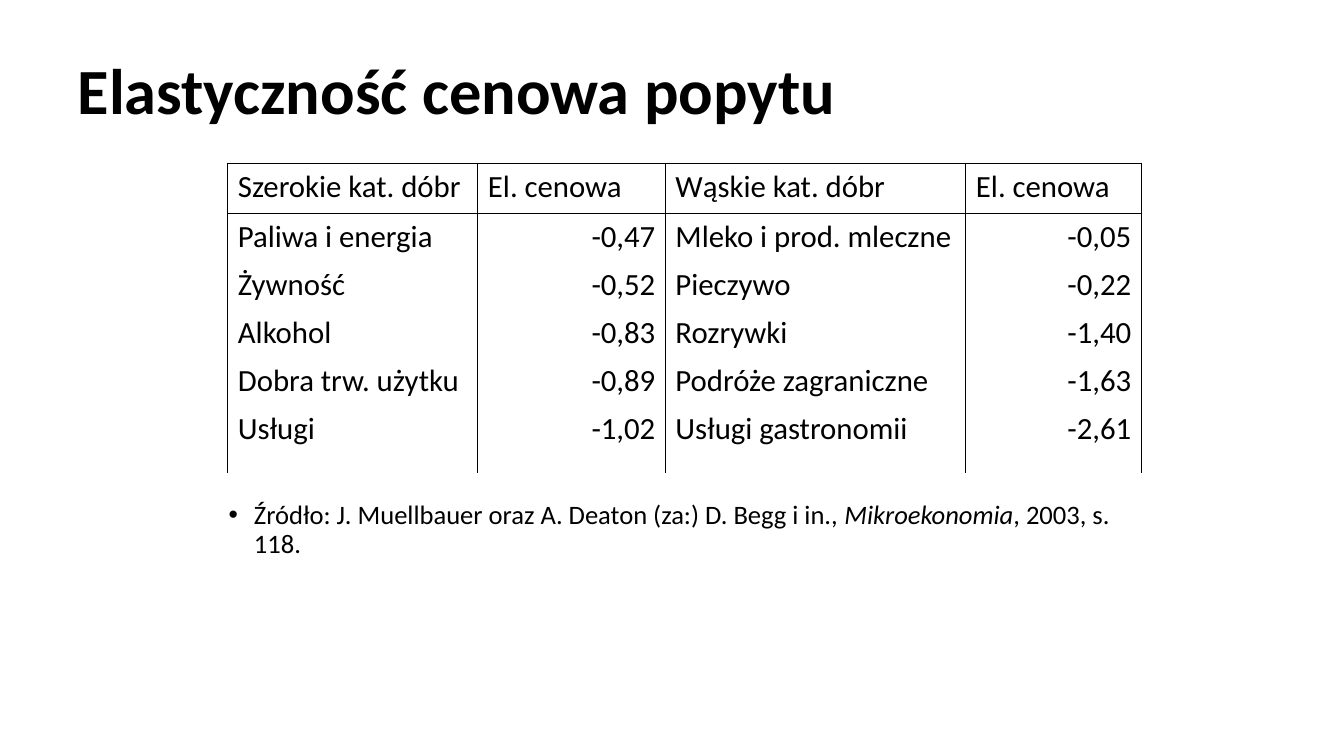
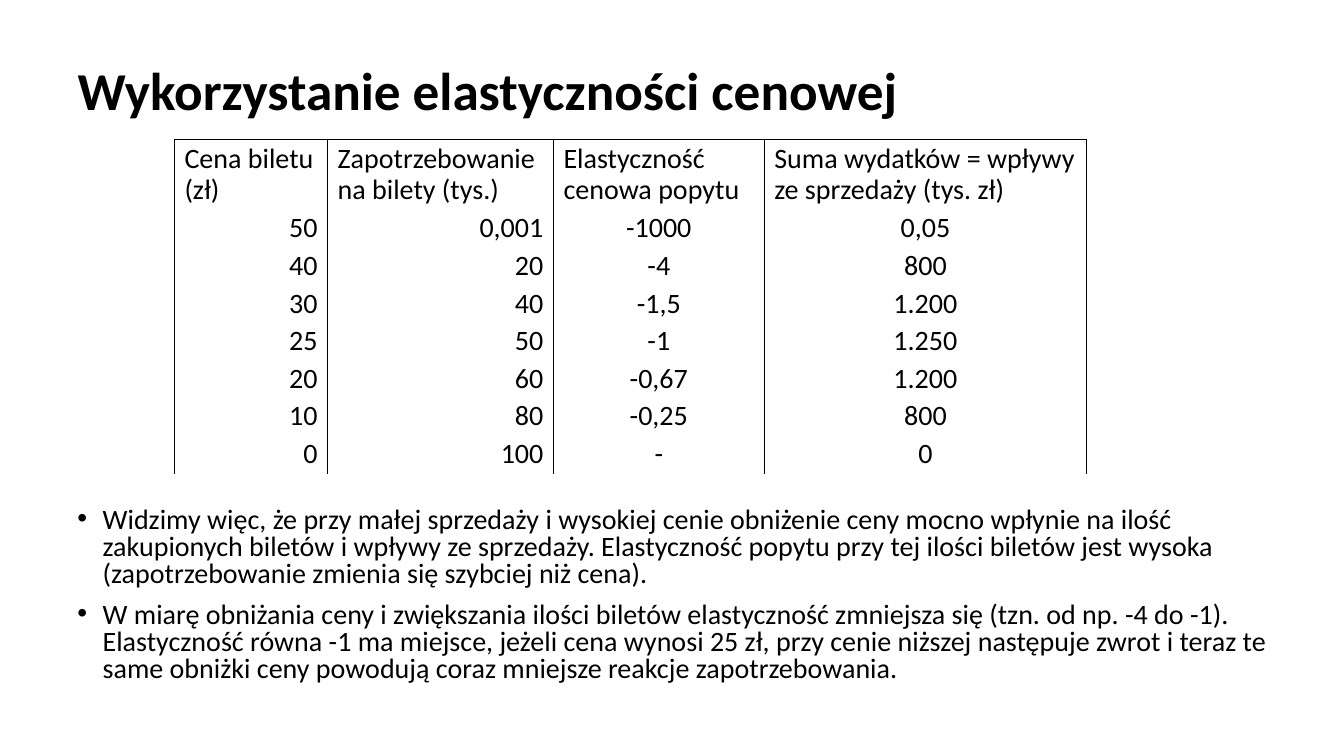
from lxml.etree import SubElement
from pptx import Presentation
from pptx.dml.color import RGBColor
from pptx.enum.text import MSO_ANCHOR, MSO_AUTO_SIZE, PP_ALIGN
from pptx.oxml.ns import qn
from pptx.util import Inches, Pt

COLORS = {"ink": "000000", "paper": "FFFFFF"}
FONT = "Calibri"
TITLE_BOX = (0.67, 0.3, 12, 1.25)
LEFT, RIGHT, CENTER = PP_ALIGN.LEFT, PP_ALIGN.RIGHT, PP_ALIGN.CENTER


def add_run(paragraph, text, size, bold=False, italic=False):
    run = paragraph.add_run()
    run.text = text
    font = run.font
    font.name, font.size, font.bold, font.italic = FONT, Pt(size), bold, italic
    font.color.rgb = RGBColor.from_string(COLORS["ink"])


def add_titled_slide(prs, title_text, size):
    slide = prs.slides.add_slide(prs.slide_layouts[5])
    slide.background.fill.solid()
    slide.background.fill.fore_color.rgb = RGBColor.from_string(COLORS["paper"])
    title = slide.shapes.title
    title.left, title.top, title.width, title.height = map(Inches, TITLE_BOX)
    frame = title.text_frame
    frame.auto_size = MSO_AUTO_SIZE.NONE
    frame.vertical_anchor = MSO_ANCHOR.MIDDLE
    heading = frame.paragraphs[0]
    heading.alignment, heading.line_spacing = LEFT, 0.9
    add_run(heading, title_text, size, bold=True)
    return slide


def set_borders(cell, sides):
    """Draw thin lines on the given sides (letters of LRTB), none elsewhere."""
    props = cell._tc.get_or_add_tcPr()
    for side in "LRTB":
        line = SubElement(props, qn(f"a:ln{side}"), w=str(Pt(1)))
        if side in sides:
            fill = SubElement(line, qn("a:solidFill"))
            SubElement(fill, qn("a:srgbClr"), val=COLORS["ink"])
        else:
            SubElement(line, qn("a:noFill"))


def add_data_table(slide, left, top, widths, heights, rows, size, aligns,
                   header_rule=False, header_spacing=1.0, body_spacing=1.0):
    """Table with vertical rules; the header has a top line and maybe a rule below."""
    table = slide.shapes.add_table(
        len(heights), len(widths), Inches(left), Inches(top),
        Inches(sum(widths)), Inches(sum(heights))).table
    table.first_row = table.horz_banding = False
    for column, width in zip(table.columns, widths):
        column.width = Inches(width)
    for row, height in zip(table.rows, heights):
        row.height = Inches(height)

    for r, values in enumerate(rows):
        is_header = r == 0
        sides = "LR"
        if is_header or (r == 1 and header_rule):
            sides += "T"
        if is_header and header_rule:
            sides += "B"
        for c, value in enumerate(values):
            cell = table.cell(r, c)
            set_borders(cell, sides)
            cell.fill.background()
            paragraph = cell.text_frame.paragraphs[0]
            paragraph.alignment = LEFT if is_header else aligns[c]
            paragraph.line_spacing = header_spacing if is_header else body_spacing
            add_run(paragraph, value, size)


def add_bullets(slide, box, bullets, size, line_spacing, space_before=0):
    """Each bullet is a list of (text, italic) pieces."""
    frame = slide.shapes.add_textbox(*map(Inches, box)).text_frame
    frame.word_wrap = True
    for i, pieces in enumerate(bullets):
        paragraph = frame.add_paragraph() if i else frame.paragraphs[0]
        paragraph.line_spacing = line_spacing
        paragraph.space_before = Pt(space_before)
        props = paragraph._p.get_or_add_pPr()
        props.set("marL", str(Inches(0.25)))
        props.set("indent", str(-Inches(0.25)))
        SubElement(props, qn("a:buFont"), typeface="Arial")
        SubElement(props, qn("a:buChar"), char="•")
        for text, italic in pieces:
            add_run(paragraph, text, size, italic=italic)


def build_elasticity_slide(prs):
    slide = add_titled_slide(prs, "Elastyczność cenowa popytu", 46)
    goods = [
        ("Szerokie kat. dóbr", "El. cenowa", "Wąskie kat. dóbr", "El. cenowa"),
        ("Paliwa i energia", "-0,47", "Mleko i prod. mleczne", "-0,05"),
        ("Żywność", "-0,52", "Pieczywo", "-0,22"),
        ("Alkohol", "-0,83", "Rozrywki", "-1,40"),
        ("Dobra trw. użytku", "-0,89", "Podróże zagraniczne", "-1,63"),
        ("Usługi", "-1,02", "Usługi gastronomii", "-2,61"),
    ]
    add_data_table(slide, 2.26, 1.62, [2.48, 1.86, 2.98, 1.74],
                   [0.5, 0.47, 0.47, 0.48, 0.47, 0.68], goods, 22,
                   (LEFT, RIGHT, LEFT, RIGHT), header_rule=True)
    source = [("Źródło: J. Muellbauer oraz A. Deaton (za:) D. Begg i in., ", False),
              ("Mikroekonomia", True), (", 2003, s. 118.", False)]
    add_bullets(slide, (2.17, 4.93, 9.07, 1.77), [source], 19, 0.9)


def build_ticket_slide(prs):
    slide = add_titled_slide(prs, "Wykorzystanie elastyczności cenowej", 38)
    tickets = [
        ("Cena biletu (zł)", "Zapotrzebowanie na bilety (tys.)",
         "Elastyczność cenowa popytu",
         "Suma wydatków = wpływy ze sprzedaży (tys. zł)"),
        ("50", "0,001", "-1000", "0,05"),
        ("40", "20", "-4", "800"),
        ("30", "40", "-1,5", "1.200"),
        ("25", "50", "-1", "1.250"),
        ("20", "60", "-0,67", "1.200"),
        ("10", "80", "-0,25", "800"),
        ("0", "100", "-", "0"),
    ]
    add_data_table(slide, 1.73, 1.38, [1.52, 2.24, 2.09, 3.2],
                   [0.7] + [0.37] * 7, tickets, 20,
                   (RIGHT, RIGHT, CENTER, CENTER),
                   header_spacing=0.9, body_spacing=0.8)
    conclusions = [
        "Widzimy więc, że przy małej sprzedaży i wysokiej cenie obniżenie ceny "
        "mocno wpłynie na ilość zakupionych biletów i wpływy ze sprzedaży. "
        "Elastyczność popytu przy tej ilości biletów jest wysoka "
        "(zapotrzebowanie zmienia się szybciej niż cena).",
        "W miarę obniżania ceny i zwiększania ilości biletów elastyczność "
        "zmniejsza się (tzn. od np. -4 do -1). Elastyczność równa -1 ma miejsce, "
        "jeżeli cena wynosi 25 zł, przy cenie niższej następuje zwrot i teraz te "
        "same obniżki ceny powodują coraz mniejsze reakcje zapotrzebowania.",
    ]
    add_bullets(slide, (0.67, 4.99, 12, 2.51),
                [[(text, False)] for text in conclusions], 20, 0.8, space_before=10)


def main():
    prs = Presentation()
    prs.slide_width, prs.slide_height = Inches(13.33), Inches(7.5)
    build_elasticity_slide(prs)
    build_ticket_slide(prs)
    prs.save("out.pptx")


if __name__ == "__main__":
    main()
